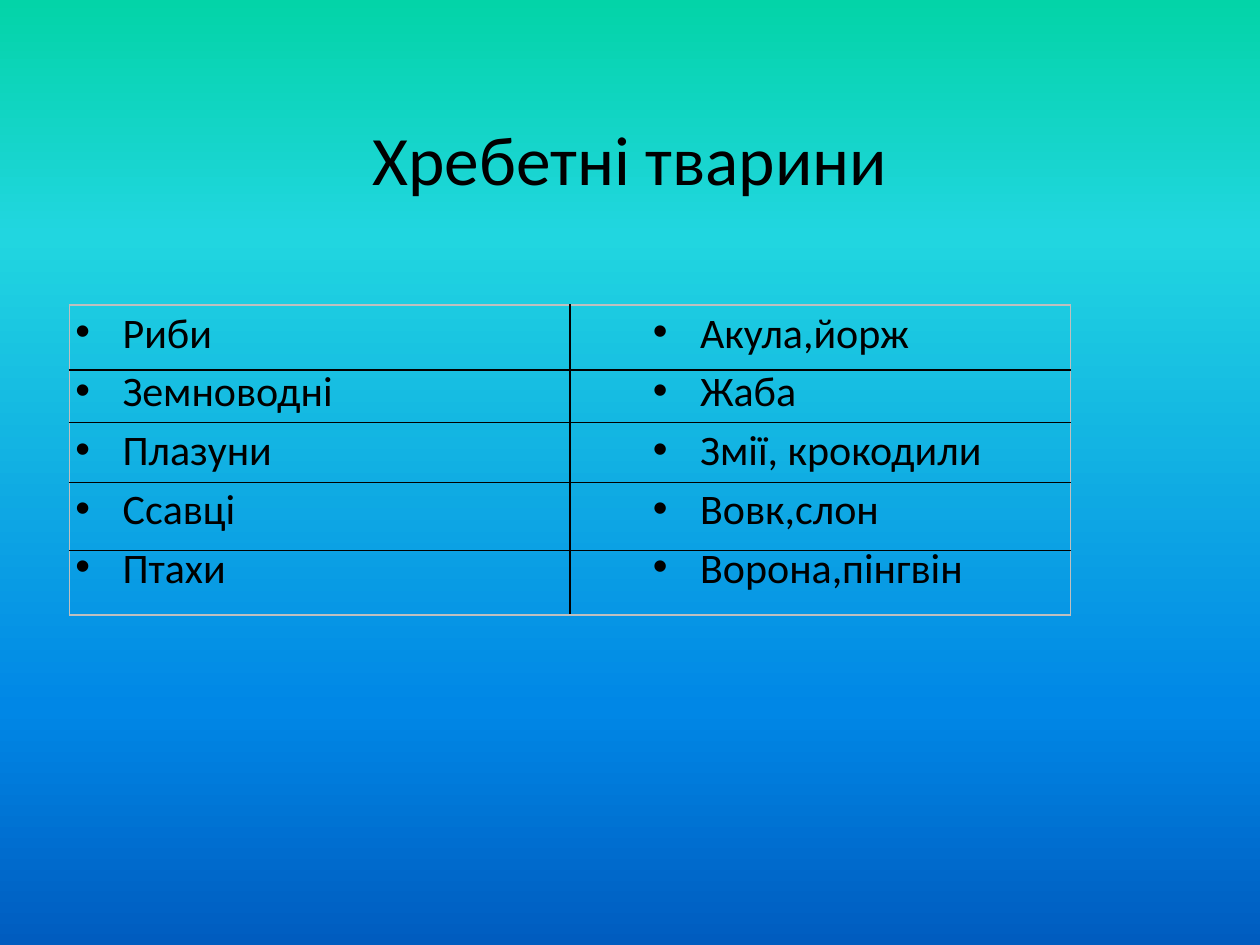
import copy

import pptx
import pptx.dml.color
import pptx.enum.text
import pptx.oxml
import pptx.oxml.ns
import pptx.util
from pptx.util import Pt

RGBColor = pptx.dml.color.RGBColor
BLACK = RGBColor(0x00, 0x00, 0x00)
GREY = RGBColor(0xBF, 0xBF, 0xBF)
SKY = [
    (0, RGBColor(0x03, 0xD4, 0xA8)),
    (0.25, RGBColor(0x21, 0xD6, 0xE0)),
    (0.75, RGBColor(0x00, 0x87, 0xE6)),
    (1, RGBColor(0x00, 0x5C, 0xBF)),
]
FONT = "Calibri"

TITLE = "Хребетні тварини"
ANIMALS = [
    ("Риби", "Акула,йорж"),
    ("Земноводні", "Жаба"),
    ("Плазуни", "Змії, крокодили"),
    ("Ссавці", "Вовк,слон"),
    ("Птахи", "Ворона,пінгвін"),
]
ROW_HEIGHTS = [37.2, 30.2, 34.2, 38.7, 37]
COLUMN_WIDTH = 286
LIST_LEFTS = [36, 366]
INDENT = 27


def paint_background(page):
    fill = page.background.fill
    fill.gradient()
    fill.gradient_angle = 270
    stop_list = page._element.xpath(".//a:gsLst")[0]
    for _ in range(len(SKY) - len(stop_list)):
        stop_list.append(copy.deepcopy(stop_list[0]))
    for stop, (position, color) in zip(fill.gradient_stops, SKY):
        stop.position = position
        stop.color.rgb = color


def add_text_box(page, left, top, width, height):
    box = page.shapes.add_textbox(Pt(left), Pt(top), Pt(width), Pt(height))
    box.text_frame.word_wrap = True
    return box.text_frame


def style(font, size):
    font.name = FONT
    font.size = Pt(size)
    font.color.rgb = BLACK


def add_title(page):
    frame = add_text_box(page, 36, 21.6, 648, 90)
    frame.vertical_anchor = pptx.enum.text.MSO_ANCHOR.MIDDLE
    para = frame.paragraphs[0]
    para.alignment = pptx.enum.text.PP_ALIGN.CENTER
    style(para.font, 39.6)
    para.add_line_break()
    para._p.xpath("a:br")[0].append(
        pptx.oxml.parse_xml(f'<a:rPr {pptx.oxml.ns.nsdecls("a")} sz="3960"/>'))
    span = para.add_run()
    span.text = TITLE
    style(span.font, 39.6)


def add_bullets(page, left, items):
    frame = add_text_box(page, left, 171.4, 318, 311)
    for index, item in enumerate(items):
        para = frame.add_paragraph() if index else frame.paragraphs[0]
        para.space_before = Pt(4.8)
        properties = para._p.get_or_add_pPr()
        properties.set("marL", str(Pt(INDENT)))
        properties.set("indent", str(-Pt(INDENT)))
        for tag in ('buFont {} typeface="Arial"', 'buChar {} char="•"'):
            properties.append(pptx.oxml.parse_xml(
                "<a:" + tag.format(pptx.oxml.ns.nsdecls("a")) + "/>"))
        span = para.add_run()
        span.text = item
        style(span.font, 24)


def add_border(cell, side, color):
    cell._tc.get_or_add_tcPr().append(pptx.oxml.parse_xml(
        f'<a:ln{side} {pptx.oxml.ns.nsdecls("a")} w="{Pt(1)}">'
        f'<a:solidFill><a:srgbClr val="{color}"/></a:solidFill></a:ln{side}>'))


def add_grid(page):
    rows, columns = len(ROW_HEIGHTS), len(LIST_LEFTS)
    table = page.shapes.add_table(
        rows, columns, Pt(39.6), Pt(174.2),
        Pt(COLUMN_WIDTH * columns), Pt(sum(ROW_HEIGHTS))).table
    table.first_row = False
    table.horz_banding = False
    for column in table.columns:
        column.width = Pt(COLUMN_WIDTH)
    for r, height in enumerate(ROW_HEIGHTS):
        table.rows[r].height = Pt(height)
        for c in range(columns):
            cell = table.cell(r, c)
            cell.margin_top = cell.margin_bottom = Pt(2)
            outer = {"L": c == 0, "R": c == columns - 1,
                     "T": r == 0, "B": r == rows - 1}
            for side, is_outer in outer.items():
                add_border(cell, side, GREY if is_outer else BLACK)
            cell.fill.background()


def main():
    deck = pptx.Presentation()
    deck.slide_width, deck.slide_height = Pt(720), Pt(540)
    page = deck.slides.add_slide(deck.slide_layouts[6])
    paint_background(page)
    add_title(page)
    for left, items in zip(LIST_LEFTS, zip(*ANIMALS)):
        add_bullets(page, left, items)
    add_grid(page)
    deck.save("out.pptx")


if __name__ == "__main__":
    main()
